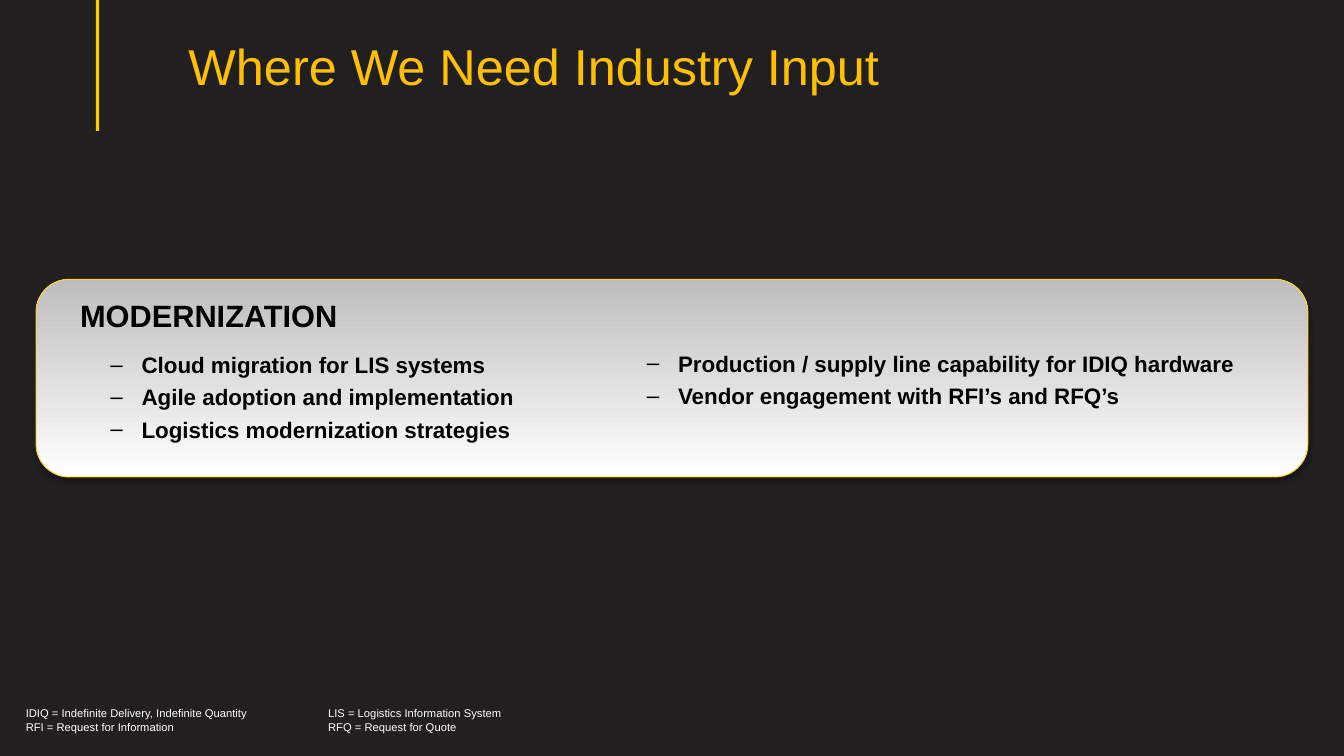
from lxml import etree
from pptx import Presentation
from pptx.dml.color import RGBColor as RGB
from pptx.enum.shapes import MSO_SHAPE as SHAPE
from pptx.enum.text import MSO_ANCHOR as ANCHOR
from pptx.oxml import parse_xml
from pptx.oxml.ns import nsdecls, qn
from pptx.util import Cm, Pt

COLORS = {"bg": "221F20", "bar": "FFCC01", "title": "FFC000", "edge": "FFD530",
          "light": "FFFFFF", "grey": "BDBDBD", "ink": "000000"}
TITLE = {"size": Pt(36), "bold": False, "color": "title"}
HEADING = {"size": Pt(22), "bold": True, "color": "ink"}
ITEM = {"size": Pt(16), "bold": True, "color": "ink"}
NOTE = {"size": Pt(8), "bold": False, "color": "light"}

TOPICS_LEFT = ["Cloud migration for LIS systems",
               "Agile adoption and implementation",
               "Logistics modernization strategies"]
TOPICS_RIGHT = ["Production / supply line capability for IDIQ hardware",
                "Vendor engagement with RFI’s and RFQ’s"]
ACRONYMS = ["IDIQ = Indefinite Delivery, Indefinite Quantity\tLIS = Logistics Information System",
            "RFI = Request for Information\tRFQ = Request for Quote"]


def rgb(name):
    return RGB.from_string(COLORS[name])


def add_text(slide, box, lines, fmt, anchor=ANCHOR.TOP, **spacing):
    tf = slide.shapes.add_textbox(*map(Cm, box)).text_frame
    tf.word_wrap = True
    tf.vertical_anchor = anchor
    for i, line in enumerate(lines):
        p = tf.paragraphs[0] if i == 0 else tf.add_paragraph()
        for name, value in spacing.items():
            setattr(p, name, value)
        r = p.add_run()
        r.text = line
        r.font.name = "Arial"
        r.font.color.rgb = rgb(fmt["color"])
        for name in ("size", "bold"):
            setattr(r.font, name, fmt[name])
    return tf


def add_dashes(tf):
    for p in tf.paragraphs:
        p.level = 1
        pPr = p._p.get_or_add_pPr()
        pPr.set("marL", str(Cm(1.27)))
        pPr.set("indent", str(Cm(-0.79)))
        etree.SubElement(pPr, qn("a:buFont")).set("typeface", "Arial")
        etree.SubElement(pPr, qn("a:buChar")).set("char", "–")


def add_header(slide, x, y, w, h):
    sp = slide.shapes.add_shape(SHAPE.RECTANGLE, Cm(x), Cm(y), Cm(0.08), Cm(h))
    sp.shadow.inherit = False
    sp.fill.solid()
    sp.fill.fore_color.rgb = rgb("bar")
    sp.line.fill.background()
    add_text(slide, (x + 2.08, y + 0.76, w - 2.08, 1.96), ["Where We Need Industry Input"],
             TITLE, ANCHOR.MIDDLE, line_spacing=0.9)


def add_panel(slide, x, y, w, h):
    sp = slide.shapes.add_shape(SHAPE.ROUNDED_RECTANGLE, *map(Cm, (x, y, w, h)))
    sp.fill.gradient()
    sp.fill.gradient_angle = 90
    for stop, name in zip(sp.fill.gradient_stops, ("light", "grey")):
        stop.color.rgb = rgb(name)
    sp.line.color.rgb = rgb("edge")
    sp.line.width = Pt(0.75)
    sp._element.spPr.append(parse_xml(
        f'<a:effectLst {nsdecls("a")}><a:outerShdw blurRad="{Pt(3.1)}" dist="{Pt(1.8)}" '
        f'dir="5400000" rotWithShape="0"><a:srgbClr val="{COLORS["ink"]}">'
        '<a:alpha val="35000"/></a:srgbClr></a:outerShdw></a:effectLst>'))
    add_text(slide, (x + 0.86, y + 0.3, 22.15, 1.02), ["MODERNIZATION"], HEADING)
    for dx, dy, width, topics in ((14.66, 1.65, 17.93, TOPICS_RIGHT),
                                  (1.14, 1.68, 15.52, TOPICS_LEFT)):
        add_dashes(add_text(slide, (x + dx, y + dy, width, 2.97), topics, ITEM,
                            space_before=Pt(4)))


def add_footer(slide, x, y, w, h):
    tf = add_text(slide, (x, y, w, h), ACRONYMS, NOTE)
    for p in tf.paragraphs:
        tabs = etree.SubElement(p._p.get_or_add_pPr(), qn("a:tabLst"))
        tab = etree.SubElement(tabs, qn("a:tab"))
        tab.set("pos", str(Cm(7.62)))
        tab.set("algn", "l")


def main():
    prs = Presentation()
    prs.slide_width, prs.slide_height = Cm(33.87), Cm(19.05)
    slide = prs.slides.add_slide(prs.slide_layouts[6])
    slide.background.fill.solid()
    slide.background.fill.fore_color.rgb = rgb("bg")
    add_header(slide, 2.42, 0, 23.39, 3.3)
    add_panel(slide, 0.91, 7.04, 32.05, 4.98)
    add_footer(slide, 0.4, 17.68, 33.1, 0.94)
    prs.save("out.pptx")


if __name__ == "__main__":
    main()
